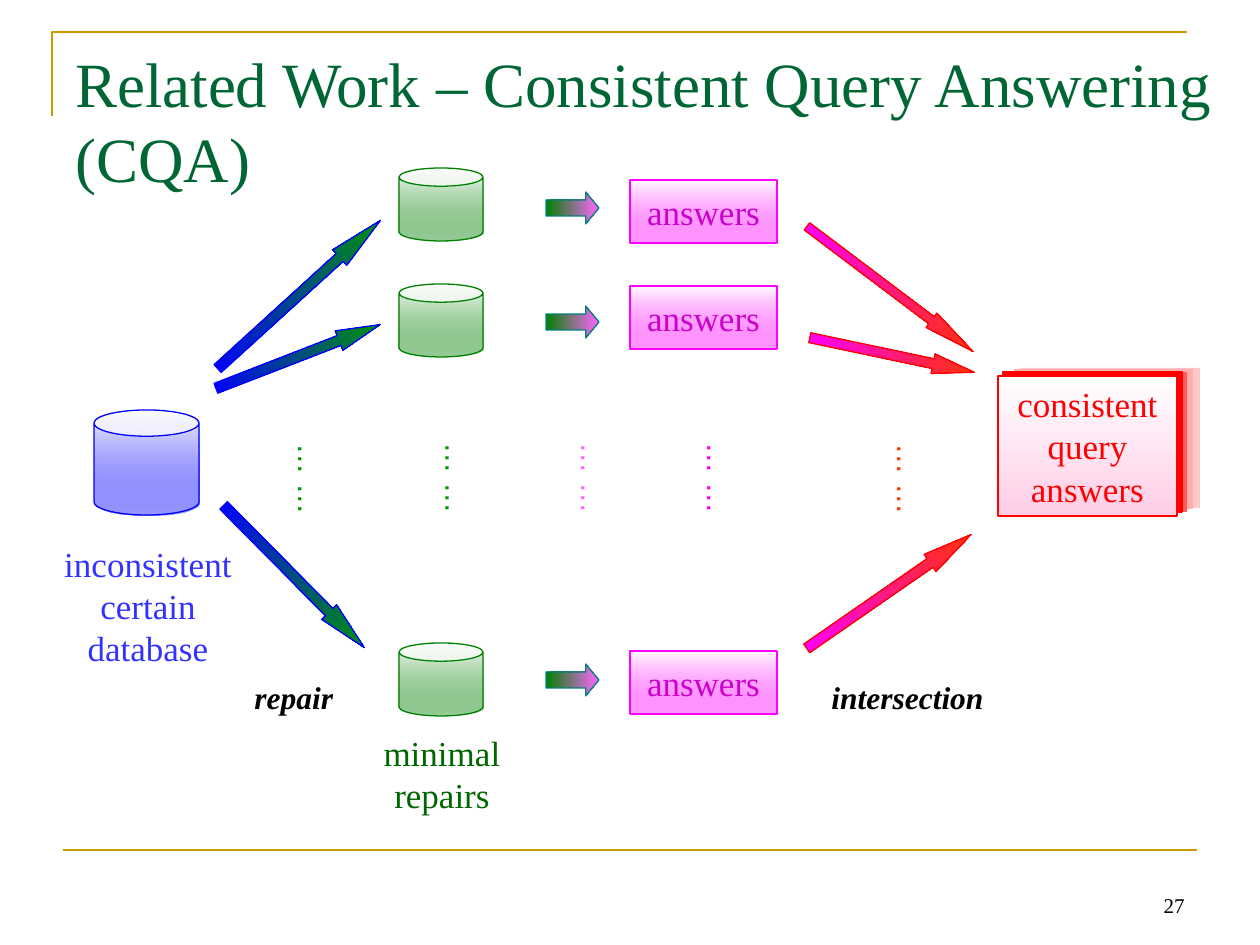
import pptx
import pptx.util
import pptx.dml.color
import pptx.enum.shapes
import pptx.enum.text
import lxml.etree

SHAPE = pptx.enum.shapes.MSO_SHAPE
ALIGN = pptx.enum.text.PP_ALIGN
ANCHOR = pptx.enum.text.MSO_ANCHOR
A = "{http://schemas.openxmlformats.org/drawingml/2006/main}"
PX = 914400 / 126
SERIF = "Times New Roman"
GOLD = "CC9900"

# Text boxes: paragraphs, box (x, y, w, h), size, colour, options
ITALIC = {"bold": True, "italic": True}
CENTER = {"align": ALIGN.CENTER}
TEXTS = [
    (["Related Work – Consistent Query Answering (CQA)"],
     (63, 38, 1197, 158), 36, "006633", {}),
    (["inconsistent certain", "database"],
     (42, 536, 212, 139), 20, "3333FF", CENTER),
    (["minimal repairs"], (336, 725, 212, 97), 20, "006600", CENTER),
    (["repair"], (242, 672, 116, 50), 18, "000000", ITALIC),
    (["intersection"], (819, 672, 199, 50), 18, "000000", ITALIC),
    (["27"], (903, 861, 294, 63), 12, "000000",
     {"align": ALIGN.RIGHT, "anchor": ANCHOR.BOTTOM}),
]
# Vertical ellipses: x, y, colour
DOTS = [(273, 431, "009900"), (420, 430, "009900"), (556, 430, "FF66FF"),
        (682, 430, "FF00FF"), (872, 431, "FF3300")]

# One row per repair: tops of the database, the small arrow and the answers box
ROWS = [(168, 192, 180), (284, 306, 286), (643, 664, 651)]

# Long arrows: box before rotation, then clockwise degrees
REPAIR_ARROWS = [((189, 284, 220, 21), 317.7), ((210, 346, 176, 21), 338.8),
                 ((194, 566, 200, 21), 45.3)]
INTERSECTION_ARROWS = [((786, 280, 208, 18), 37), ((808, 345, 168, 20), 11.9),
                       ((789, 581, 200, 21), 325.3)]

# Sheets behind the result, back to front: x, y, fill, line
SHEETS = [(1021, 368, "FFC9C9", None), (1014, 369, "FFAFAF", None),
          (1008, 372, "FF5B5B", None), (1003, 372, "FF0000", "FF0000")]


def emu(px):
    return pptx.util.Emu(round(px * PX))


def rgb(color):
    return pptx.dml.color.RGBColor.from_string(color)


def set_line(line, color, width):
    line.color.rgb = rgb(color)
    line.width = pptx.util.Pt(width)


def add_shape(kind, box, fill, line=None, down=False, alpha=None):
    """fill is a colour or a (start, end) gradient; alpha is the end's opacity in %."""
    sp = slide.shapes.add_shape(kind, *map(emu, box))
    sp.shadow.inherit = False
    if isinstance(fill, str):
        sp.fill.solid()
        sp.fill.fore_color.rgb = rgb(fill)
    else:
        sp.fill.gradient()
        sp.fill.gradient_angle = 270 if down else 0
        for stop, color in zip(sp.fill.gradient_stops, fill):
            stop.color.rgb = rgb(color)
        if alpha:
            end = sp.element.spPr.findall(f".//{A}gs/{A}srgbClr")[-1]
            lxml.etree.SubElement(end, A + "alpha", val=str(alpha * 1000))
    if line:
        set_line(sp.line, line, 0.75)
    else:
        sp.line.fill.background()
    return sp


def write(sp, paragraphs, size, color, align=ALIGN.LEFT, anchor=ANCHOR.TOP,
          wrap=True, font=SERIF, bold=False, italic=False):
    tf = sp.text_frame
    tf.word_wrap = wrap
    tf.vertical_anchor = anchor
    style = {"name": font, "size": pptx.util.Pt(size), "bold": bold, "italic": italic}
    for i, text in enumerate(paragraphs):
        p = tf.add_paragraph() if i else tf.paragraphs[0]
        p.alignment = align
        r = p.add_run()
        r.text = text
        for key, value in style.items():
            setattr(r.font, key, value)
        r.font.color.rgb = rgb(color)


def add_text(box, *args, **options):
    sp = slide.shapes.add_textbox(*map(emu, box))
    write(sp, *args, **options)
    return sp


def add_arrow(box, fill, line, rotation=0):
    """Right arrow whose head takes a quarter of its length."""
    sp = add_shape(SHAPE.RIGHT_ARROW, box, fill, line)
    sp.adjustments[1] = box[2] / 4 / box[3]
    sp.rotation = rotation


def add_database(box, color):
    add_shape(SHAPE.CAN, box, ("FFFFFF", color), color, down=True, alpha=40)


def add_frame():
    fb = slide.shapes.build_freeform(52, 116, scale=PX)
    fb.add_line_segments([(52, 32), (1187, 32)], close=False)
    corner = fb.convert_to_shape()
    corner.shadow.inherit = False
    corner.fill.background()
    rule = slide.shapes.add_connector(
        pptx.enum.shapes.MSO_CONNECTOR.STRAIGHT, *map(emu, (63, 850, 1197, 850)))
    lxml.etree.SubElement(rule.element.spPr, A + "effectLst")
    for sp in (corner, rule):
        set_line(sp.line, GOLD, 1.5)


prs = pptx.Presentation()
prs.slide_width, prs.slide_height = emu(1260), emu(945)
slide = prs.slides.add_slide(prs.slide_layouts[6])

add_frame()
for paragraphs, box, size, color, options in TEXTS:
    add_text(box, paragraphs, size, color, **options)

add_database((94, 410, 105, 105), "0000FF")
for can_y, arrow_y, answers_y in ROWS:
    add_database((399, can_y, 84, 73), "008000")
    add_arrow((546, arrow_y, 53, 32), ("008000", "FF66FF"), "008080")
    sp = add_shape(SHAPE.RECTANGLE, (630, answers_y, 147, 63),
                   ("FFFFFF", "FF00FF"), "FF00FF", down=True, alpha=40)
    write(sp, ["answers"], 20, "CC00CC", ALIGN.CENTER, ANCHOR.MIDDLE, wrap=False)

for x, y, color in DOTS:
    sp = add_text((x, y, 63, 84), ["… …"], 18, color, wrap=False, font="Arial")
    sp.text_frame._txBody.bodyPr.set("vert", "eaVert")

for box, rotation in REPAIR_ARROWS:
    add_arrow(box, ("0000FF", "009900"), "0000FF", rotation)
for box, rotation in INTERSECTION_ARROWS:
    add_arrow(box, ("FF00FF", "FF3300"), "FF0000", rotation)

for x, y, fill, line in SHEETS:
    add_shape(SHAPE.RECTANGLE, (x, y, 179, 140), fill, line)
sp = add_shape(SHAPE.RECTANGLE, (998, 376, 179, 140), ("FFFFFF", "FFCDE6"),
               "FF0000", down=True)
write(sp, ["consistent query answers"], 20, "FF0000", ALIGN.CENTER, ANCHOR.MIDDLE)

prs.save("out.pptx")
